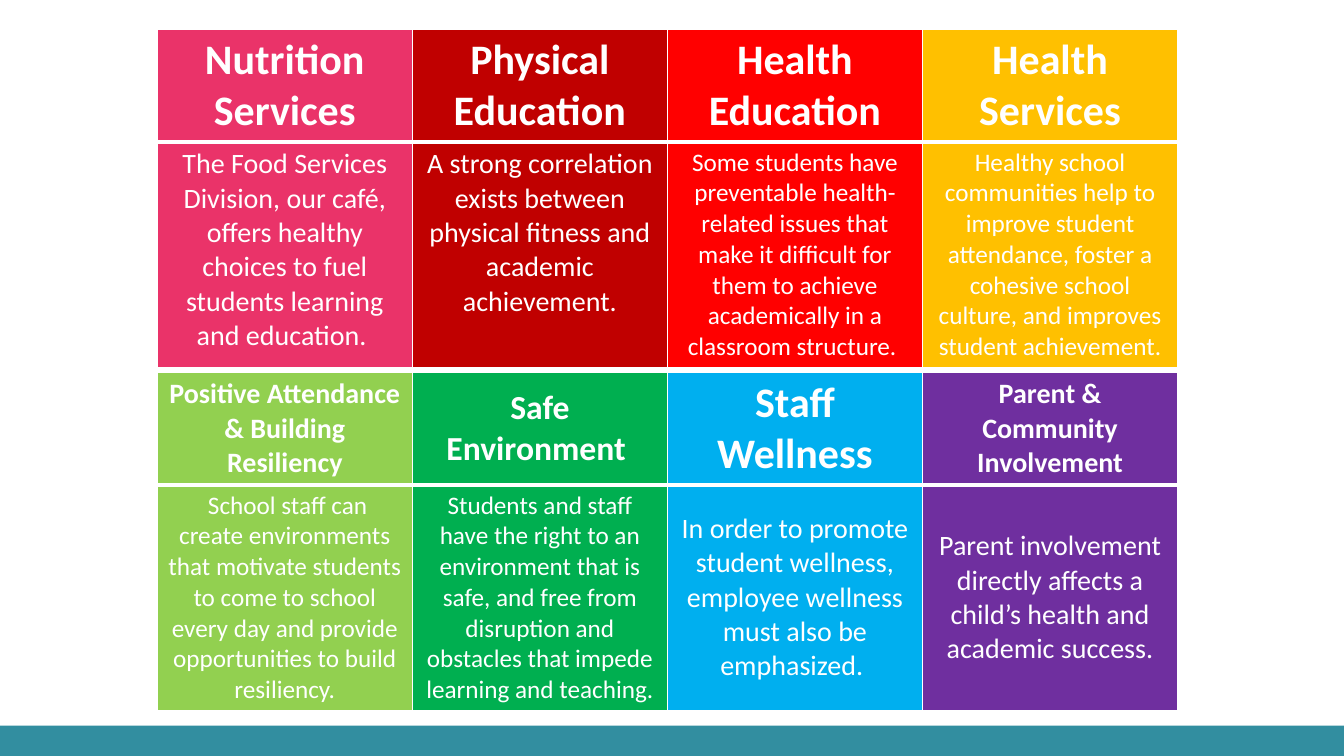
import pptx
import pptx.dml.color
import pptx.enum.shapes
import pptx.enum.text
import pptx.oxml
import pptx.oxml.ns
import pptx.util

Inches = pptx.util.Inches
Pt = pptx.util.Pt
RGBColor = pptx.dml.color.RGBColor
ANCHOR = pptx.enum.text.MSO_ANCHOR

WHITE = RGBColor(0xFF, 0xFF, 0xFF)
TEAL = RGBColor(0x32, 0x8E, 0xA0)
PINK = RGBColor(0xEA, 0x33, 0x69)
DARK_RED = RGBColor(0xC0, 0x00, 0x00)
RED = RGBColor(0xFF, 0x00, 0x00)
AMBER = RGBColor(0xFF, 0xC0, 0x00)
LIME = RGBColor(0x92, 0xD0, 0x50)
GREEN = RGBColor(0x00, 0xAF, 0x50)
BLUE = RGBColor(0x00, 0xAF, 0xEF)
PURPLE = RGBColor(0x6F, 0x2F, 0x9F)

# Content: colour, heading, heading size, description, description size
STUDENT_TOPICS = [
    (PINK, "Nutrition Services", 30,
     "The Food Services Division, our café, offers healthy choices to fuel "
     "students learning and education. ", 20),
    (DARK_RED, "Physical Education", 30,
     "A strong correlation exists between physical fitness and academic "
     "achievement.", 20),
    (RED, "Health Education", 30,
     "Some students have preventable health-related issues that make it "
     "difficult for them to achieve academically in a classroom structure. ", 18),
    (AMBER, "Health Services", 30,
     "Healthy school communities help to improve student attendance, foster "
     "a cohesive school culture, and improves student achievement.", 18),
]
COMMUNITY_TOPICS = [
    (LIME, "Positive Attendance & Building Resiliency", 20,
     " School staff can create environments that motivate students to come to "
     "school every day and provide opportunities to build resiliency.", 18),
    (GREEN, "Safe Environment ", 24,
     "Students and staff have the right to an environment that is safe, and "
     "free from disruption and obstacles that impede learning and teaching.", 18),
    (BLUE, "Staff Wellness", 30,
     "In order to promote student wellness, employee wellness must also be "
     "emphasized. ", 20),
    (PURPLE, "Parent & Community Involvement", 20,
     "Parent involvement directly affects a child’s health and academic "
     "success.", 20),
]
# Topics, top of the table, vertical anchor
TABLES = [
    (STUDENT_TOPICS, 0.29, ANCHOR.TOP),
    (COMMUNITY_TOPICS, 3.69, ANCHOR.MIDDLE),
]
TABLE_LEFT = 1.56
COLUMN_WIDTH = 2.53
ROW_HEIGHTS = (1.12, 2.23)
THIN, THICK = 1, 3


def set_borders(cell, top, bottom):
    properties = cell._tc.get_or_add_tcPr()
    for side, width in (("L", THIN), ("R", THIN), ("T", top), ("B", bottom)):
        properties.append(pptx.oxml.parse_xml(
            f'<a:ln{side} {pptx.oxml.ns.nsdecls("a")} w="{Pt(width)}">'
            f'<a:solidFill><a:srgbClr val="{WHITE}"/></a:solidFill></a:ln{side}>'))


def fill_cell(cell, text, size, bold, color, anchor):
    cell.fill.solid()
    cell.fill.fore_color.rgb = color
    cell.vertical_anchor = anchor
    para = cell.text_frame.paragraphs[0]
    para.text = text
    para.alignment = pptx.enum.text.PP_ALIGN.CENTER
    para.font.name = "Calibri"
    para.font.size = Pt(size)
    para.font.bold = bold
    para.font.color.rgb = WHITE


def add_topic_table(page, topics, top, anchor):
    table = page.shapes.add_table(
        len(ROW_HEIGHTS), len(topics), Inches(TABLE_LEFT), Inches(top),
        Inches(COLUMN_WIDTH * len(topics)), Inches(sum(ROW_HEIGHTS))).table
    table.first_row = False
    table.horz_banding = False
    for row, height in zip(table.rows, ROW_HEIGHTS):
        row.height = Inches(height)
    for index, (color, heading, heading_size, detail, detail_size) in enumerate(topics):
        table.columns[index].width = Inches(COLUMN_WIDTH)
        head, body = table.cell(0, index), table.cell(1, index)
        set_borders(head, THIN, THICK)
        set_borders(body, THICK, THIN)
        fill_cell(head, heading, heading_size, True, color, anchor)
        fill_cell(body, detail, detail_size, False, color, anchor)


def main():
    deck = pptx.Presentation()
    deck.slide_width, deck.slide_height = Inches(13.33), Inches(7.5)
    page = deck.slides.add_slide(deck.slide_layouts[6])

    # Footer band
    band = page.shapes.add_shape(
        pptx.enum.shapes.MSO_SHAPE.RECTANGLE,
        0, Inches(7.2), deck.slide_width, Inches(0.3))
    band.shadow.inherit = False
    band.fill.solid()
    band.fill.fore_color.rgb = TEAL
    band.line.fill.background()

    # Topic tables
    for topics, top, anchor in TABLES:
        add_topic_table(page, topics, top, anchor)

    deck.save("out.pptx")


if __name__ == "__main__":
    main()
